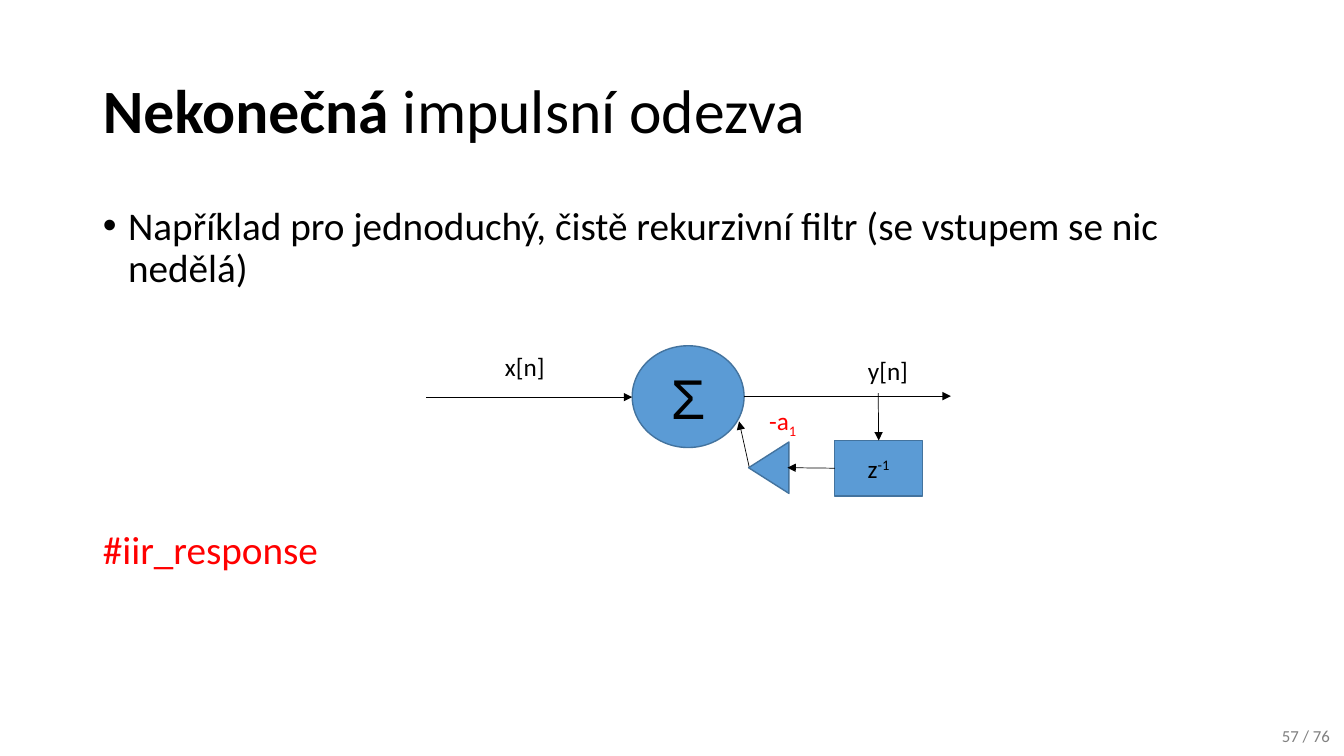
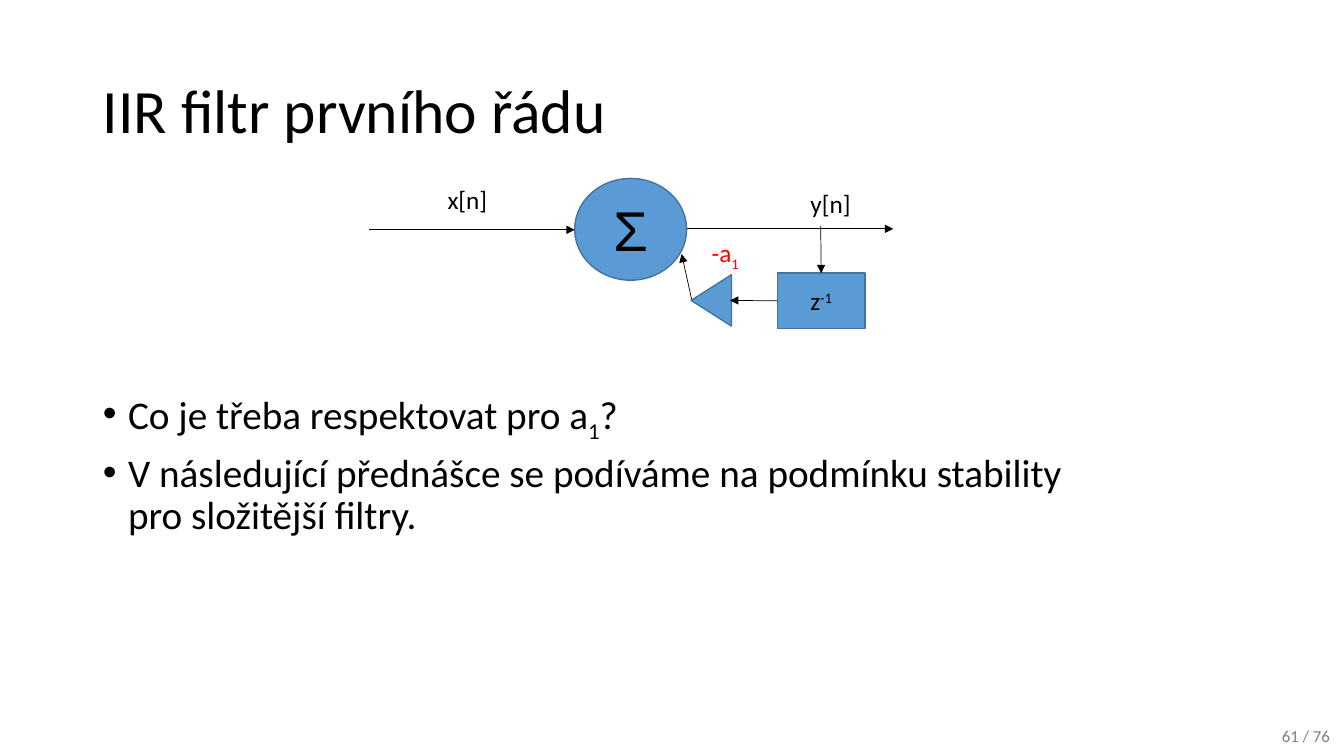
from lxml import etree
from pptx import Presentation
from pptx import util as u
from pptx.dml.color import RGBColor
from pptx.enum import shapes, text
from pptx.oxml.ns import qn

PX = 9144  # 100 px to the inch
BLACK, RED, GREY, BLUE, NAVY = "000000", "FF0000", "808080", "5B9BD5", "43739E"
LEFT, MID, RIGHT = text.PP_ALIGN.LEFT, text.PP_ALIGN.CENTER, text.PP_ALIGN.RIGHT
ink = RGBColor.from_string


def place(at):
    return [u.Emu(v * PX) for v in at]


def write(par, runs, size=18, color=BLACK, font="Calibri", align=LEFT,
          line=1.0, before=0, bullet=None):
    """Fill a paragraph; a run is (text, baseline in percent, bold)."""
    par.alignment, par.line_spacing, par.space_before = align, line, u.Pt(before)
    if bullet is not None:
        ppr = par._p.get_or_add_pPr()
        ppr.set("marL", str(25 * PX if bullet else 0))
        ppr.set("indent", str(-25 * PX if bullet else 0))
        if bullet:
            etree.SubElement(ppr, qn("a:buFont")).set("typeface", "Arial")
            etree.SubElement(ppr, qn("a:buChar")).set("char", bullet)
        else:
            etree.SubElement(ppr, qn("a:buNone"))
    for words, base, bold in runs:
        run = par.add_run()
        run.text = words
        run.font.size, run.font.name, run.font.bold = u.Pt(size), font, bold
        run.font.color.rgb = ink(color)
        if base:
            run._r.get_or_add_rPr().set("baseline", str(base * 1000))


# Slide content: body items are (runs, colour, bullet, space before)
pages = [
    dict(title=[("Nekonečná ", 0, True), ("impulsní odezva", 0, False)],
         body=(92, 200, 1150, 476), shift=(0, 0), page="57 / 76",
         items=[([("Například pro jednoduchý, čistě rekurzivní filtr "
                   "(se vstupem se nic nedělá)", 0, False)], BLACK, "•", 0),
                ([("#iir_response", 0, False)], RED, "", 171)]),
    dict(title=[("IIR filtr prvního řádu", 0, False)],
         body=(92, 383, 1025, 287), shift=(-57, -166), page="61 / 76",
         items=[([("Co je třeba respektovat pro a", 0, False), ("1", -25, False),
                  ("?", 0, False)], BLACK, "•", 0),
                ([("V následující přednášce se podíváme na podmínku stability "
                   "pro složitější filtry.", 0, False)], BLACK, "•", 10)]),
]

# Filter diagram, shared by both slides
kind = shapes.MSO_SHAPE
nodes = [
    ("sum", kind.OVAL, (627, 343, 111, 101), 0,
     [("Σ", 0, False)], dict(size=40, font="Arial")),
    ("delay", kind.RECTANGLE, (828, 437, 87, 55), 0,
     [("z", 0, False), ("-1", 30, False)], {}),
    ("gain", kind.FLOWCHART_EXTRACT, (737, 444, 51, 40), 270, [], {}),
]
labels = [
    ((491, 344, 92, 40), [("x[n]", 0, False)], BLACK),
    ((851, 348, 92, 40), [("y[n]", 0, False)], BLACK),
    ((753, 397, 55, 40), [("-a", 0, False), ("1", -25, False)], RED),
]
arrows = [
    ("input", (423, 394, 627, 394)),
    ("output", (738, 393, 943, 393)),
    ("to gain", (828, 465, 781, 464)),
    ("to sum", (743, 463, 733, 418)),
    ("to delay", (871, 390, 872, 437)),
]

deck = Presentation()
deck.slide_width, deck.slide_height = place((1333, 750))

for page in pages:
    slide = deck.slides.add_slide(deck.slide_layouts[1])
    draw = slide.shapes
    dx, dy = page["shift"]

    # Title and list
    title, body = slide.placeholders[0], slide.placeholders[1]
    for box, at, anchor in ((title, (92, 40, 1150, 145), text.MSO_ANCHOR.MIDDLE),
                            (body, page["body"], text.MSO_ANCHOR.TOP)):
        box.left, box.top, box.width, box.height = place(at)
        box.text_frame.auto_size = text.MSO_AUTO_SIZE.NONE
        box.text_frame.vertical_anchor = anchor
    write(title.text_frame.paragraphs[0], page["title"], size=44, line=0.9)
    frame = body.text_frame
    for i, (runs, color, bullet, before) in enumerate(page["items"]):
        par = frame.add_paragraph() if i else frame.paragraphs[0]
        write(par, runs, size=28, color=color, line=0.9, before=before, bullet=bullet)

    # Diagram nodes
    made = {}
    for name, form, (x, y, w, h), turn, runs, style in nodes:
        node = draw.add_shape(form, *place((x + dx, y + dy, w, h)))
        node.rotation = turn
        node.shadow.inherit = False
        node.fill.solid()
        node.fill.fore_color.rgb = ink(BLUE)
        node.line.color.rgb, node.line.width = ink(NAVY), u.Pt(1)
        node.text_frame.vertical_anchor = text.MSO_ANCHOR.MIDDLE
        write(node.text_frame.paragraphs[0], runs, align=MID, **style)
        made[name] = node

    # Arrows
    for name, (x1, y1, x2, y2) in arrows:
        arrow = draw.add_connector(shapes.MSO_CONNECTOR.STRAIGHT,
                                   *place((x1 + dx, y1 + dy, x2 + dx, y2 + dy)))
        if name == "to gain":
            arrow.begin_connect(made["delay"], 1)
        if name == "to delay":
            arrow.end_connect(made["delay"], 0)
        arrow.line.color.rgb, arrow.line.width = ink(BLACK), u.Pt(0.5)
        etree.SubElement(arrow.line._get_or_add_ln(), qn("a:tailEnd")).set("type", "triangle")
        etree.SubElement(arrow._element.spPr, qn("a:effectLst"))

    # Signal labels and page number
    notes = [((x + dx, y + dy, w, h), runs, dict(color=color))
             for (x, y, w, h), runs, color in labels]
    notes.append(((1242, 715, 87, 33), [(page["page"], 0, False)],
                  dict(size=12, color=GREY, align=RIGHT)))
    for at, runs, style in notes:
        box = draw.add_textbox(*place(at))
        box.text_frame.word_wrap = True
        write(box.text_frame.paragraphs[0], runs, **style)

deck.save("out.pptx")
